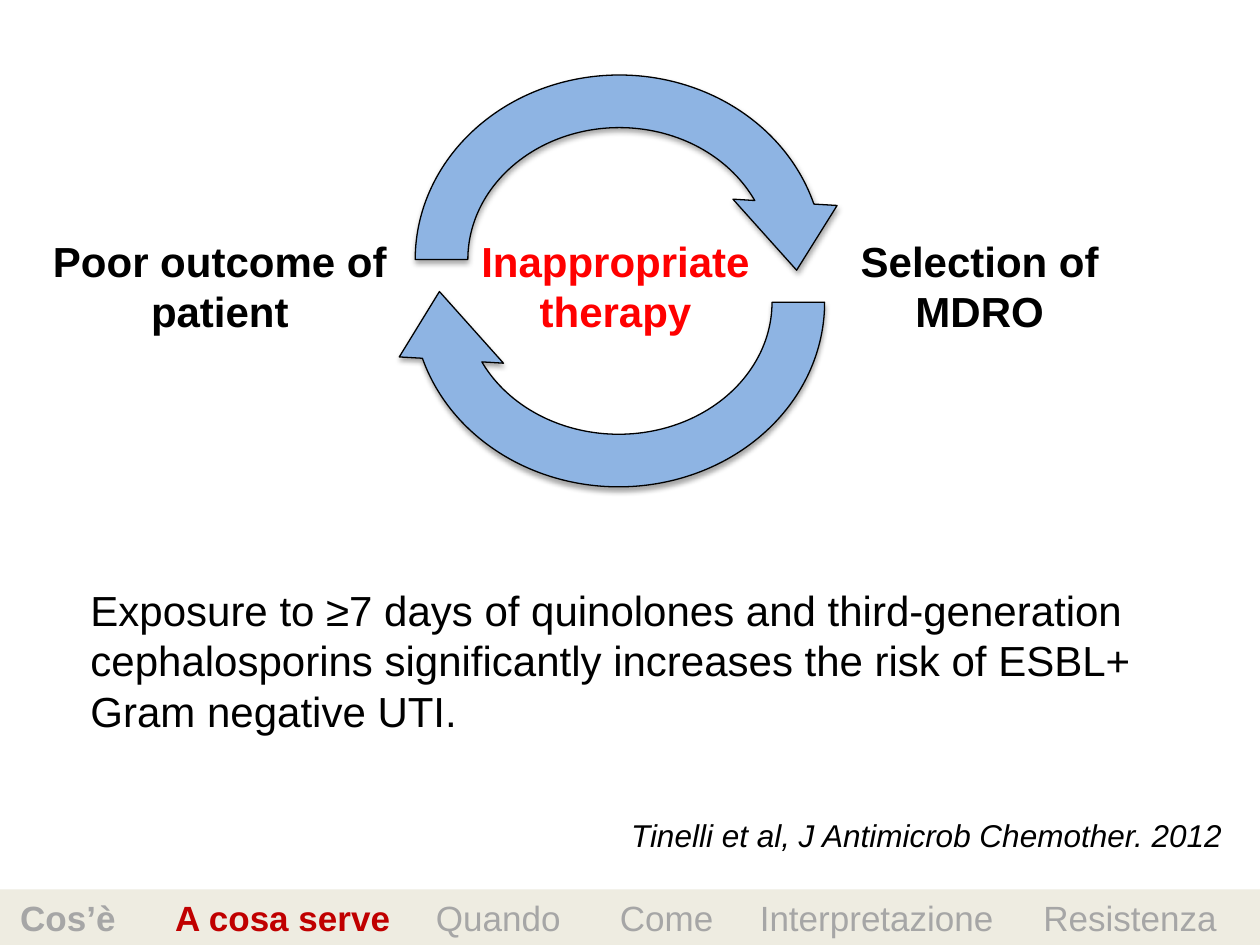
"""Build the slide on the cycle of inappropriate therapy and resistance."""
import pptx
import pptx.dml.color
import pptx.enum.shapes
import pptx.enum.text
import pptx.oxml
import pptx.oxml.ns
import pptx.util

IN = pptx.util.Inches
ALIGN = pptx.enum.text.PP_ALIGN
SHAPES = pptx.enum.shapes.MSO_SHAPE
NS = pptx.oxml.ns.nsdecls("a")
WIDTH, HEIGHT = 10, 7.5

LABEL_TOP, LABEL_HEIGHT = 1.82, 0.91
LABELS = [
    (["Poor outcome of", "patient"], 0.31, 2.87, "000000", False),
    (["Inappropriate", "therapy"], 3.71, 2.35, "FF0000", False),
    (["Selection of", "MDRO"], 6.07, 3.41, "000000", True),
]
ARROWS = [(3.07, 0.73, 3.68, 3.34, True), (3.09, 0.39, 3.65, 3.34, False)]
ARROW_ADJUSTMENTS = [0.125, 13.492, 204.577, 108, 0.124]
FINDING = ("Exposure to ≥7 days of quinolones and third-generation cephalosporins "
           "significantly increases the risk of ESBL+ Gram negative UTI.")
CITATION = "Tinelli et al, J Antimicrob Chemother. 2012"
NAVIGATION = [
    ("Cos’è", 0, "A6A6A6", True),
    ("A cosa serve", 1.23, "C00000", True),
    ("Quando", 3.3, "A6A6A6", False),
    ("Come", 4.76, "A6A6A6", False),
    ("Interpretazione", 5.87, "A6A6A6", False),
    ("Resistenza", 8.12, "A6A6A6", False),
]


def rgb(color):
    """Return a colour object for a hex string."""
    return pptx.dml.color.RGBColor.from_string(color)


def add_run(p, text, size=24, color="000000", bold=False, italic=False):
    """Add a formatted run to a paragraph."""
    r = p.add_run()
    r.text = text
    r.font.name, r.font.size = "Arial", pptx.util.Pt(size)
    r.font.bold, r.font.italic = bold, italic
    r.font.color.rgb = rgb(color)


def add_text(s, lines, box, wrap=True, align=ALIGN.LEFT, **style):
    """Add a text box with one paragraph per line."""
    tf = s.shapes.add_textbox(*map(IN, box)).text_frame
    tf.word_wrap = wrap
    tf.auto_size = pptx.enum.text.MSO_AUTO_SIZE.SHAPE_TO_FIT_TEXT
    for i, line in enumerate(lines):
        p = tf.add_paragraph() if i else tf.paragraphs[0]
        p.alignment = align
        add_run(p, line, **style)


def add_filled(s, kind, box, fill):
    """Add a filled preset shape without a shadow."""
    sp = s.shapes.add_shape(kind, *map(IN, box))
    sp.shadow.inherit = False
    sp.fill.solid()
    sp.fill.fore_color.rgb = rgb(fill)
    return sp


def add_arrow(s, left, top, width, height, flipped):
    """Add one half of the cycle with a soft shadow beneath it."""
    sp = add_filled(s, SHAPES.CIRCULAR_ARROW, (left, top, width, height), "8EB4E3")
    for i, value in enumerate(ARROW_ADJUSTMENTS):
        sp.adjustments[i] = value
    sp.line.color.rgb = rgb("000000")
    sp.line.width = pptx.util.Pt(0.75)
    spPr = sp._element.spPr
    if flipped:
        spPr.xfrm.set("flipH", "1")
        spPr.xfrm.set("flipV", "1")
    effects = spPr.find(pptx.oxml.ns.qn("a:effectLst"))
    effects.append(pptx.oxml.parse_xml(
        f'<a:outerShdw {NS} blurRad="{pptx.util.Pt(3.1)}" dist="{pptx.util.Pt(1.8)}" '
        'dir="5400000" rotWithShape="0"><a:srgbClr val="000000">'
        '<a:alpha val="35000"/></a:srgbClr></a:outerShdw>'))


def add_navigation(s):
    """Add the bottom bar with its sections set on tab stops."""
    sp = add_filled(s, SHAPES.RECTANGLE, (-0.01, 7.06, WIDTH + 0.01, 0.44), "EEECE1")
    sp.line.fill.background()
    tf = sp.text_frame
    tf.margin_left = IN(0.17)
    p = tf.paragraphs[0]
    p.alignment = ALIGN.LEFT
    stops = "".join(f'<a:tab pos="{IN(x)}" algn="l"/>' for _, x, _, _ in NAVIGATION[1:])
    p._p.get_or_add_pPr().append(pptx.oxml.parse_xml(f"<a:tabLst {NS}>{stops}</a:tabLst>"))
    for i, (name, _, color, bold) in enumerate(NAVIGATION):
        add_run(p, "\t" + name if i else name, size=20, color=color, bold=bold)


def main():
    """Build and save the slide."""
    prs = pptx.Presentation()
    prs.slide_width, prs.slide_height = IN(WIDTH), IN(HEIGHT)
    s = prs.slides.add_slide(prs.slide_layouts[6])
    add_text(s, [FINDING], (0.62, 4.59, 8.83, 1.31))
    add_text(s, [CITATION], (4.91, 6.43, 5.01, 0.4), wrap=False, size=18, italic=True)
    for arrow in ARROWS:
        add_arrow(s, *arrow)
    for lines, left, width, color, wrap in LABELS:
        add_text(s, lines, (left, LABEL_TOP, width, LABEL_HEIGHT), wrap=wrap,
                 align=ALIGN.CENTER, color=color, bold=True)
    add_navigation(s)
    prs.save("out.pptx")


if __name__ == "__main__":
    main()
